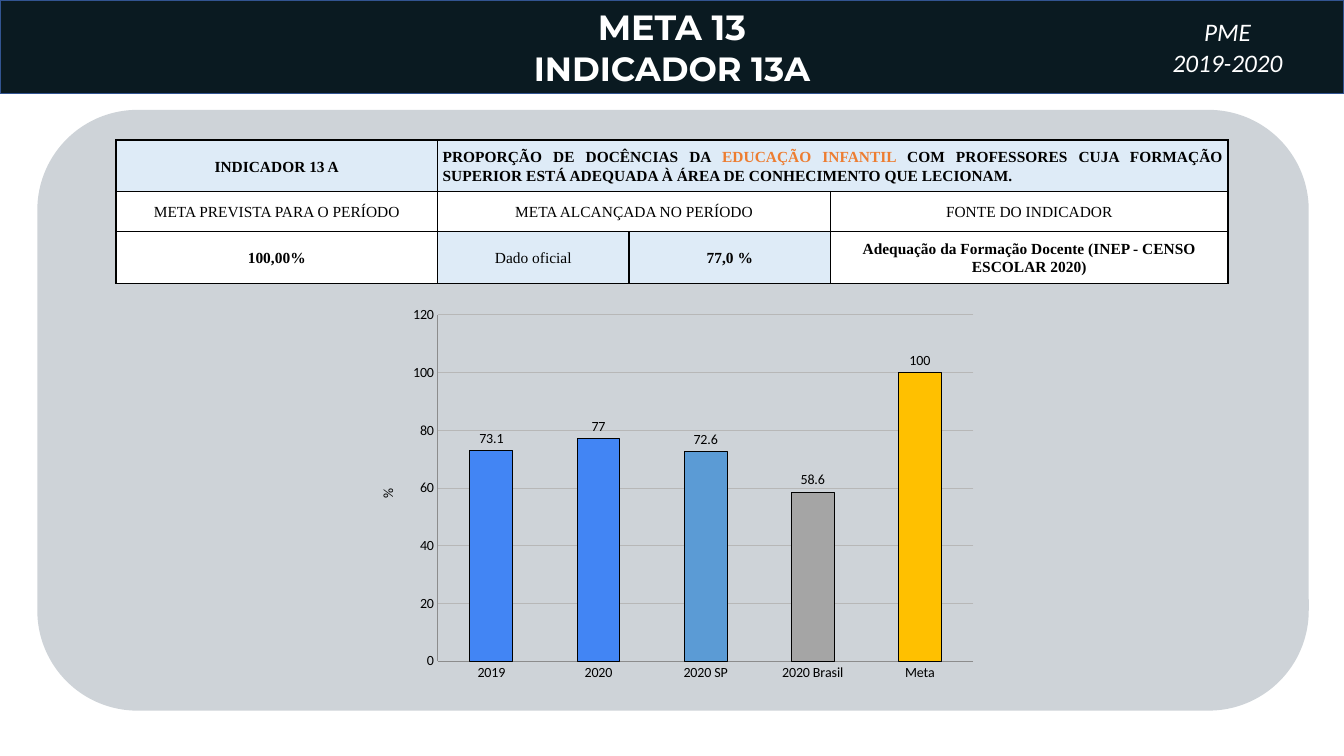
from lxml.etree import SubElement
from pptx import Presentation
from pptx.chart.data import CategoryChartData
from pptx.dml.color import RGBColor
from pptx.enum.chart import XL_CHART_TYPE as CHART, XL_LABEL_POSITION as LABEL, XL_TICK_MARK as TICK
from pptx.enum.shapes import MSO_SHAPE as SHAPE
from pptx.enum.text import MSO_ANCHOR as ANCHOR, MSO_AUTO_SIZE as AUTO, PP_ALIGN as ALIGN
from pptx.oxml import parse_xml
from pptx.oxml.ns import nsdecls, qn
from pptx.util import Inches, Pt

WIDTH, HEIGHT = Inches(13.33), Inches(7.5)
COLORS = {
    "white": "FFFFFF", "black": "000000", "navy": "0A1A21", "edge": "325491",
    "panel": "CED3D8", "pale": "DEEBF7", "orange": "ED7D31", "grid": "B7B7B7",
    "blue": "4285F4", "sky": "5B9BD5", "gray": "A5A5A5", "gold": "FFC000",
    "axis": "8C8C8C",
}


def rgb(name):
    return RGBColor.from_string(COLORS[name])


def cols(percent):
    return int(WIDTH * percent / 100)


def rows(percent):
    return int(HEIGHT * percent / 100)


def area(x, y, w, h):
    return cols(x), rows(y), cols(w), rows(h)


def set_font(font, name, size, color, bold=False, italic=False):
    font.name, font.size = name, Pt(size)
    font.bold, font.italic = bold, italic
    font.color.rgb = rgb(color)


def set_line(line, color, width=0.75):
    line.color.rgb = rgb(color)
    line.width = Pt(width)


def write_lines(tf, lines, sizes, font, **style):
    tf.word_wrap = True
    tf.vertical_anchor = ANCHOR.MIDDLE
    tf.text = "\n".join(lines)
    for p, size in zip(tf.paragraphs, sizes):
        p.alignment = ALIGN.CENTER
        p.line_spacing = 1.0
        set_font(p.font, font, size, "white", **style)


def add_header(s):
    title = s.shapes.title
    title.left, title.top, title.width, title.height = area(0, 0, 100, 12.4)
    title.fill.solid()
    title.fill.fore_color.rgb = rgb("navy")
    set_line(title.line, "edge", 1)
    title.text_frame.auto_size = AUTO.NONE
    write_lines(title.text_frame, ["META 13", "INDICADOR 13A"], [25, 24], "Montserrat", bold=True)


def add_period(s):
    sp = s.shapes.add_textbox(*area(81.55, 1.47, 19.58, 9.47))
    write_lines(sp.text_frame, ["PME", "2019-2020"], [18, 18], "Calibri", italic=True)


def add_panel(s):
    sp = s.shapes.add_shape(SHAPE.ROUNDED_RECTANGLE, *area(2.78, 14.53, 94.6, 79.47))
    sp.shadow.inherit = False
    sp.fill.solid()
    sp.fill.fore_color.rgb = rgb("panel")
    sp.line.fill.background()


def set_borders(cell):
    tc_pr = cell._tc.get_or_add_tcPr()
    for side in ("lnL", "lnR", "lnT", "lnB"):
        ln = SubElement(tc_pr, qn(f"a:{side}"), w=str(Pt(1)))
        fill = SubElement(ln, qn("a:solidFill"))
        SubElement(fill, qn("a:srgbClr"), val=COLORS["black"])


def fill_cell(cell, runs, fill, bold, align=ALIGN.CENTER):
    cell.fill.solid()
    cell.fill.fore_color.rgb = rgb(fill)
    cell.vertical_anchor = ANCHOR.MIDDLE
    cell.margin_left = cell.margin_right = Inches(0.05)
    cell.margin_top, cell.margin_bottom = Inches(0.01), 0
    p = cell.text_frame.paragraphs[0]
    p.alignment, p.line_spacing, p.space_after = align, 1.07, Pt(8)
    set_font(p.font, "Times New Roman", 11, "black", bold)
    for text, color in runs:
        r = p.add_run()
        r.text = text
        if color != "black":
            r.font.color.rgb = rgb(color)


def add_indicator_table(s):
    table = s.shapes.add_table(3, 4, *area(8.63, 18.53, 82.67, 18.93)).table
    table.first_row = table.horz_banding = False
    for column, width in zip(table.columns, (23.93, 14.25, 15, 29.56)):
        column.width = cols(width)
    for row, height in zip(table.rows, (6.8, 5.33, 6.8)):
        row.height = rows(height)
    for cell in table.iter_cells():
        set_borders(cell)
    table.cell(0, 1).merge(table.cell(0, 3))
    table.cell(1, 1).merge(table.cell(1, 2))

    fill_cell(table.cell(0, 1), [
        ("PROPORÇÃO DE DOCÊNCIAS DA ", "black"),
        ("EDUCAÇÃO INFANTIL ", "orange"),
        ("COM PROFESSORES CUJA FORMAÇÃO SUPERIOR ESTÁ ADEQUADA "
         "À ÁREA DE CONHECIMENTO QUE LECIONAM.", "black"),
    ], "pale", True, ALIGN.JUSTIFY)
    for row, column, text, fill, bold in (
        (0, 0, "INDICADOR 13 A", "pale", True),
        (1, 0, "META PREVISTA PARA O PERÍODO", "white", False),
        (1, 1, "META ALCANÇADA NO PERÍODO", "white", False),
        (1, 3, "FONTE DO INDICADOR", "white", False),
        (2, 0, "100,00%", "white", True),
        (2, 1, "Dado oficial", "pale", False),
        (2, 2, "77,0 %", "pale", True),
        (2, 3, "Adequação da Formação Docente (INEP - CENSO ESCOLAR 2020)", "white", True),
    ):
        fill_cell(table.cell(row, column), [(text, "black")], fill, bold)


def place_plot(chart, x, y, w, h):
    plot_area = chart._chartSpace.chart.plotArea
    for old in plot_area.findall(qn("c:layout")):
        plot_area.remove(old)
    sizes = "".join(f'<c:{k} val="{v}"/>' for k, v in zip("xywh", (x, y, w, h)))
    plot_area.insert(0, parse_xml(
        f'<c:layout {nsdecls("c")}><c:manualLayout><c:layoutTarget val="inner"/>'
        f'<c:xMode val="edge"/><c:yMode val="edge"/>{sizes}</c:manualLayout></c:layout>'))


def format_axes(chart):
    for axis in (chart.category_axis, chart.value_axis):
        axis.major_tick_mark = axis.minor_tick_mark = TICK.NONE
        set_line(axis.format.line, "axis")
        set_font(axis.tick_labels.font, "Calibri", 10, "black")
    axis = chart.value_axis
    axis.minimum_scale, axis.maximum_scale, axis.major_unit = 0, 120, 20
    set_line(axis.major_gridlines.format.line, "grid")
    tf = axis.axis_title.text_frame
    tf.text = "%"
    set_font(tf.paragraphs[0].font, "Calibri", 10, "black")


def add_result_chart(s):
    data = CategoryChartData()
    data.categories = ["2019", "2020", "2020 SP", "2020 Brasil", "Meta"]
    data.add_series("Series 1", (73.1, 77, 72.6, 58.6, 100))
    frame = s.shapes.add_chart(CHART.COLUMN_CLUSTERED, *area(26.48, 39.6, 46.89, 51.47), data)
    chart = frame.chart
    chart.has_legend = chart.has_title = False
    set_font(chart.font, "Calibri", 10, "black")
    place_plot(chart, 0.13, 0.04, 0.85, 0.89)
    format_axes(chart)

    plot = chart.plots[0]
    plot.gap_width = 150
    plot.vary_by_categories = False
    plot.has_data_labels = True
    labels = plot.data_labels
    labels.show_value = True
    labels.position = LABEL.OUTSIDE_END
    set_font(labels.font, "Calibri", 10, "black")
    for i, color in enumerate(("blue", "blue", "sky", "gray", "gold")):
        bar = plot.series[0].points[i].format
        bar.fill.solid()
        bar.fill.fore_color.rgb = rgb(color)
        set_line(bar.line, "black")


def main():
    prs = Presentation()
    prs.slide_width, prs.slide_height = WIDTH, HEIGHT
    s = prs.slides.add_slide(prs.slide_layouts[5])
    add_header(s)
    add_panel(s)
    add_indicator_table(s)
    add_result_chart(s)
    add_period(s)
    prs.save("out.pptx")


if __name__ == "__main__":
    main()
